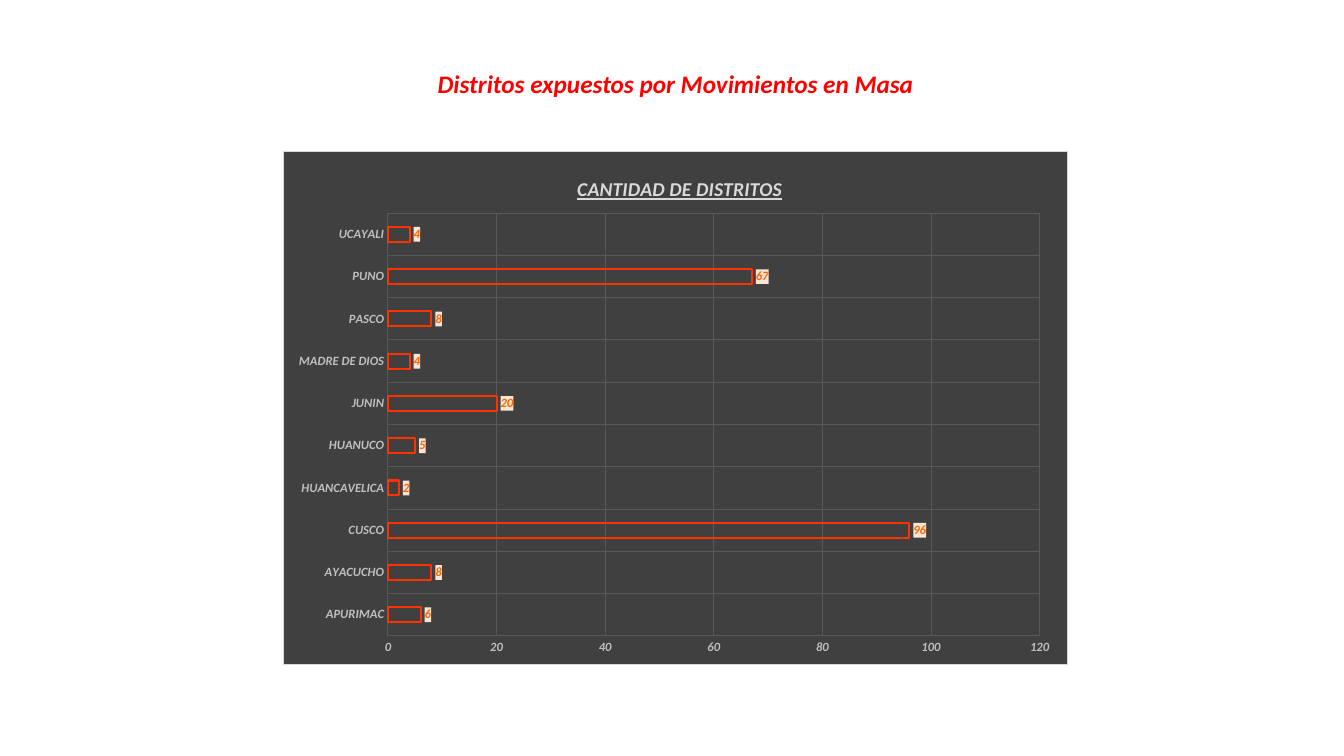
from lxml import etree
from pptx import Presentation
from pptx.chart.data import CategoryChartData
from pptx.dml.color import RGBColor
from pptx.enum.chart import XL_CHART_TYPE, XL_LABEL_POSITION, XL_TICK_MARK
from pptx.enum.text import MSO_ANCHOR, MSO_AUTO_SIZE, PP_ALIGN
from pptx.oxml import parse_xml
from pptx.oxml.ns import nsdecls, qn
from pptx.util import Inches, Pt

BAR_CLUSTERED = XL_CHART_TYPE.BAR_CLUSTERED
OUTSIDE_END = XL_LABEL_POSITION.OUTSIDE_END
NO_TICK = XL_TICK_MARK.NONE
CENTER = PP_ALIGN.CENTER
MIDDLE = MSO_ANCHOR.MIDDLE
FIT_SHAPE = MSO_AUTO_SIZE.SHAPE_TO_FIT_TEXT

FONT = "Calibri"
RED = RGBColor(0xFF, 0x00, 0x00)
BAR_RED = RGBColor(0xFF, 0x33, 0x00)
ORANGE = RGBColor(0xFF, 0x66, 0x00)
PEACH = RGBColor(0xFB, 0xE5, 0xD6)
DARK = RGBColor(0x40, 0x40, 0x40)
GRID = RGBColor(0x59, 0x59, 0x59)
SILVER = RGBColor(0xBF, 0xBF, 0xBF)
PALE = RGBColor(0xD9, 0xD9, 0xD9)
BLACK = RGBColor(0x00, 0x00, 0x00)

DISTRICTS = {
    "APURIMAC": 6, "AYACUCHO": 8, "CUSCO": 96, "HUANCAVELICA": 2,
    "HUANUCO": 5, "JUNIN": 20, "MADRE DE DIOS": 4, "PASCO": 8,
    "PUNO": 67, "UCAYALI": 4,
}


def set_font(font, size, color, bold=True, italic=True, underline=None):
    font.name = FONT
    font.size = Pt(size)
    font.color.rgb = color
    font.bold = bold
    font.italic = italic
    font.underline = underline


def write_text(tf, text, size, color, **style):
    p = tf.paragraphs[0]
    p.alignment = CENTER
    r = p.add_run()
    r.text = text
    set_font(r.font, size, color, **style)


def fill_xml(fill, border=None):
    line = ""
    if border is not None:
        line = (f'<a:ln w="{Pt(0.75)}"><a:solidFill><a:srgbClr val="{border}"/>'
                '</a:solidFill></a:ln>')
    return parse_xml(
        f'<c:spPr {nsdecls("c", "a")}><a:solidFill><a:srgbClr val="{fill}"/>'
        f'</a:solidFill>{line}</c:spPr>')


def set_layout(parent, index, **places):
    """Place a chart part by fractions of the chart area."""
    for old in parent.findall(qn("c:layout")):
        parent.remove(old)
    layout = etree.Element(qn("c:layout"))
    manual = etree.SubElement(layout, qn("c:manualLayout"))
    if "w" in places:
        etree.SubElement(manual, qn("c:layoutTarget"), val="inner")
    for key in ("x", "y"):
        etree.SubElement(manual, qn(f"c:{key}Mode"), val="edge")
    for key, value in places.items():
        etree.SubElement(manual, qn(f"c:{key}"), val=str(value))
    parent.insert(index, layout)


def format_axis(axis):
    axis.major_tick_mark = axis.minor_tick_mark = NO_TICK
    axis.format.line.fill.background()
    axis.has_major_gridlines = True
    line = axis.major_gridlines.format.line
    line.color.rgb = GRID
    line.width = Pt(0.75)
    set_font(axis.tick_labels.font, 9, SILVER)


def add_title(slide, text):
    title = slide.shapes.title
    title.left, title.top = Inches(4.21), Inches(0.63)
    title.width, title.height = Inches(4.98), Inches(0.4)
    tf = title.text_frame
    tf.word_wrap = False
    tf.auto_size = FIT_SHAPE
    tf.vertical_anchor = MIDDLE
    write_text(tf, text, 18, RED)


def add_district_chart(slide):
    data = CategoryChartData(number_format="#,##0")
    data.categories = list(DISTRICTS)
    data.add_series("Series 1", list(DISTRICTS.values()))
    chart = slide.shapes.add_chart(
        BAR_CLUSTERED, Inches(2.81), Inches(1.5), Inches(7.78), Inches(5.1),
        data).chart
    set_font(chart.font, 10, BLACK, bold=False, italic=False)
    chart.has_legend = False

    # Chart title
    chart.has_title = True
    title = chart.chart_title
    write_text(title.text_frame, "CANTIDAD DE DISTRITOS", 14, PALE,
               underline=True)
    title.include_in_layout = False
    set_layout(title._element, 1, x=0.37, y=0.04)

    # Axes
    format_axis(chart.category_axis)
    value_axis = chart.value_axis
    format_axis(value_axis)
    value_axis.minimum_scale = 0
    value_axis.maximum_scale = 120
    value_axis.major_unit = 20

    # Outlined bars
    plot = chart.plots[0]
    plot.gap_width = 182
    plot.overlap = -50
    plot.vary_by_categories = False
    bars = plot.series[0]
    bars.format.fill.background()
    bars.format.line.color.rgb = BAR_RED
    bars.format.line.width = Pt(1.5)

    # Value labels
    labels = bars.data_labels
    labels.show_value = True
    labels.position = OUTSIDE_END
    labels.number_format = "#,##0"
    labels.number_format_is_linked = False
    set_font(labels.font, 9, ORANGE)
    labels._element.find(qn("c:txPr")).addprevious(fill_xml(PEACH))

    # Dark background and plot position
    chart_part = chart._chartSpace.find(qn("c:chart"))
    chart_part.addnext(fill_xml(DARK, border=PALE))
    set_layout(chart_part.find(qn("c:plotArea")), 0,
               x=0.133, y=0.12, w=0.832, h=0.824)


def main():
    prs = Presentation()
    prs.slide_width, prs.slide_height = Inches(13.33), Inches(7.5)
    slide = prs.slides.add_slide(prs.slide_layouts[5])
    add_title(slide, "Distritos expuestos por Movimientos en Masa")
    add_district_chart(slide)
    prs.save("out.pptx")


if __name__ == "__main__":
    main()
